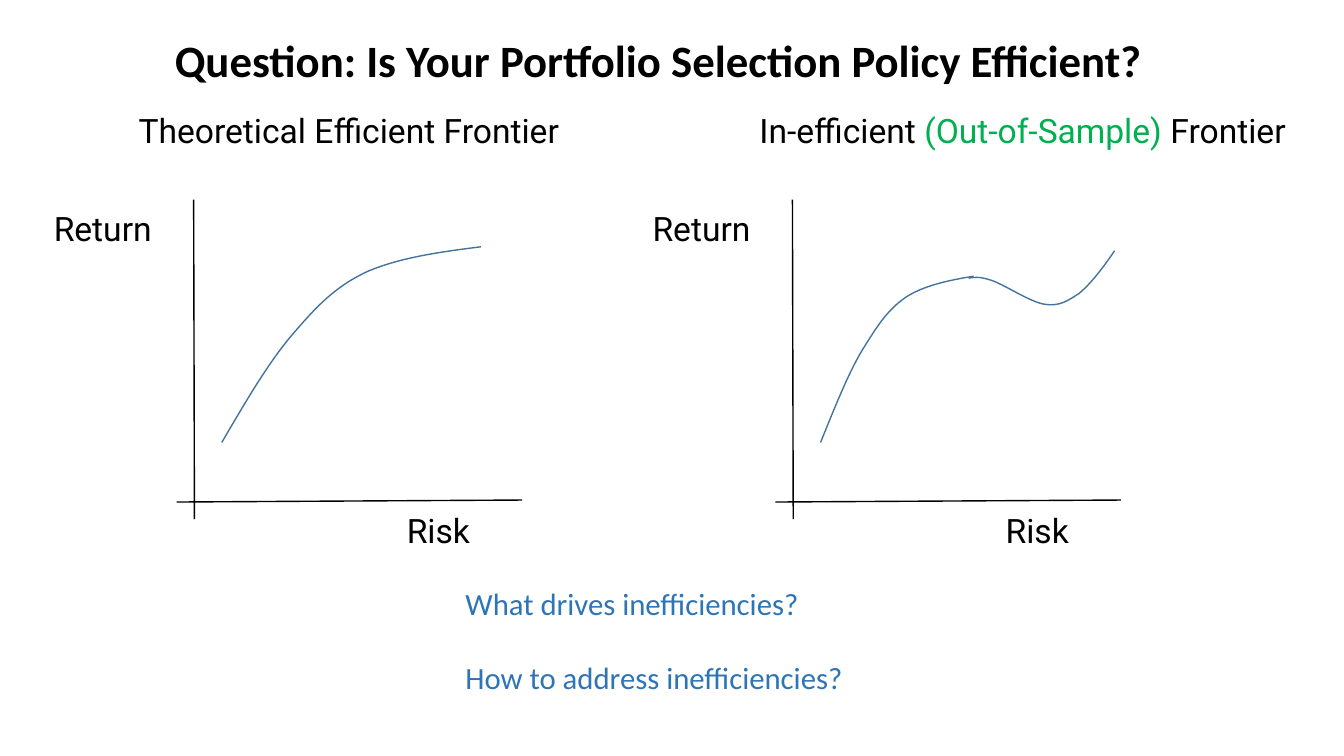
from lxml import etree
from pptx import Presentation
from pptx.dml.color import RGBColor
from pptx.enum.shapes import MSO_CONNECTOR
from pptx.enum.text import PP_ALIGN
from pptx.oxml.ns import qn
from pptx.util import Cm, Pt

LEFT, CENTER = PP_ALIGN.LEFT, PP_ALIGN.CENTER
STRAIGHT = MSO_CONNECTOR.STRAIGHT

BLACK, GREEN, QUESTION_BLUE, CURVE_BLUE = "000000", "00B050", "2E75B6", "43739E"
PANEL_STEP = 15.09

# Each curve: a start point, then two control points and an end point per segment
EFFICIENT_FRONTIER = [
    (5.59, 11.15),
    (6.17, 10.16), (6.76, 9.14), (7.37, 8.43),
    (7.98, 7.72), (8.43, 7.24), (9.22, 6.86),
    (10.03, 6.5), (11.07, 6.35), (12.12, 6.22),
]
INEFFICIENT_RISE = [
    (20.68, 11.15),
    (21.03, 10.29), (21.36, 9.45), (21.72, 8.84),
    (22.1, 8.23), (22.35, 7.82), (22.83, 7.49),
    (23.29, 7.19), (23.93, 7.06), (24.54, 6.96),
]
INEFFICIENT_DIP = [
    (24.41, 7.01),
    (24.54, 6.99), (24.66, 6.96), (24.97, 7.06),
    (25.3, 7.16), (25.96, 7.62), (26.34, 7.67),
    (26.7, 7.72), (26.9, 7.59), (27.2, 7.39),
    (27.48, 7.16), (27.79, 6.76), (28.09, 6.32),
]


def color(hex_string):
    return RGBColor.from_string(hex_string)


class FrontierSlide:
    def __init__(self, slide):
        self.shapes = slide.shapes
        self.title_font = "Calibri"
        self.label_font = "Roboto"
        self.line_width = Pt(1)

    def text(self, box, paragraphs, font, size, align=CENTER, bold=False, gap=0):
        """Paragraphs are lists of (wording, colour) runs; gap is the points between them."""
        frame = self.shapes.add_textbox(*map(Cm, box)).text_frame
        frame.word_wrap = True
        for index, runs in enumerate(paragraphs):
            paragraph = frame.add_paragraph() if index else frame.paragraphs[0]
            paragraph.alignment = align
            if index:
                paragraph.space_before = Pt(gap)
            for wording, run_color in runs:
                run = paragraph.add_run()
                run.text = wording
                run.font.name = font
                run.font.size = Pt(size)
                run.font.bold = bold
                run.font.color.rgb = color(run_color)

    def label(self, box, *runs):
        self.text(box, [runs], self.label_font, 24)

    def stroke(self, shape, line_color):
        shape.line.color.rgb = color(line_color)
        shape.line.width = self.line_width

    def axis(self, start, end):
        line = self.shapes.add_connector(STRAIGHT, *map(Cm, start + end))
        self.stroke(line, BLACK)
        etree.SubElement(line._element.spPr, qn("a:effectLst"))

    def axes(self, dx):
        """Draw one risk-return plane, moved right by dx."""
        self.axis((4.88 + dx, 5.03), (4.9 + dx, 13.08))
        self.axis((13.16 + dx, 12.6), (4.45 + dx, 12.65))
        self.label((8.79 + dx, 12.73, 4.52, 1.2), ("Risk", BLACK))
        self.label((dx, 5.11, 5.18, 1.2), ("Return", BLACK))

    def curve(self, points):
        start, *rest = [(Cm(x), Cm(y)) for x, y in points]
        builder = self.shapes.build_freeform(*start)
        builder.add_line_segments(rest, close=False)
        curve = builder.convert_to_shape()
        curve.shadow.inherit = False
        curve.fill.background()
        self.stroke(curve, CURVE_BLUE)
        # Every three straight steps become one cubic Bézier segment
        steps = list(curve._element.iter(qn("a:lnTo")))
        for first in range(0, len(steps), 3):
            bezier = etree.Element(qn("a:cubicBezTo"))
            steps[first].addprevious(bezier)
            for step in steps[first:first + 3]:
                bezier.append(step[0])
                step.getparent().remove(step)


def main():
    presentation = Presentation()
    presentation.slide_width = Cm(33.87)
    presentation.slide_height = Cm(19.05)
    page = FrontierSlide(presentation.slides.add_slide(presentation.slide_layouts[6]))

    page.text((0.38, 0.71, 32.44, 1.63),
              [[("Question: Is Your Portfolio Selection Policy Efficient?", BLACK)]],
              page.title_font, 32, bold=True)
    page.text((11.48, 14.6, 14.68, 3.1),
              [[("What drives inefficiencies?", QUESTION_BLUE)],
               [("How to address inefficiencies?", QUESTION_BLUE)]],
              page.title_font, 22, align=LEFT, gap=26.5)

    for panel in range(2):
        page.axes(panel * PANEL_STEP)
    page.label((2.77, 2.64, 12.04, 1.2), ("Theoretical Efficient Frontier", BLACK))
    page.label((17.86, 2.64, 15.82, 1.2), ("In-efficient ", BLACK),
               ("(Out-of-Sample) ", GREEN), ("Frontier", BLACK))
    for points in (EFFICIENT_FRONTIER, INEFFICIENT_RISE, INEFFICIENT_DIP):
        page.curve(points)

    presentation.save("out.pptx")


if __name__ == "__main__":
    main()
